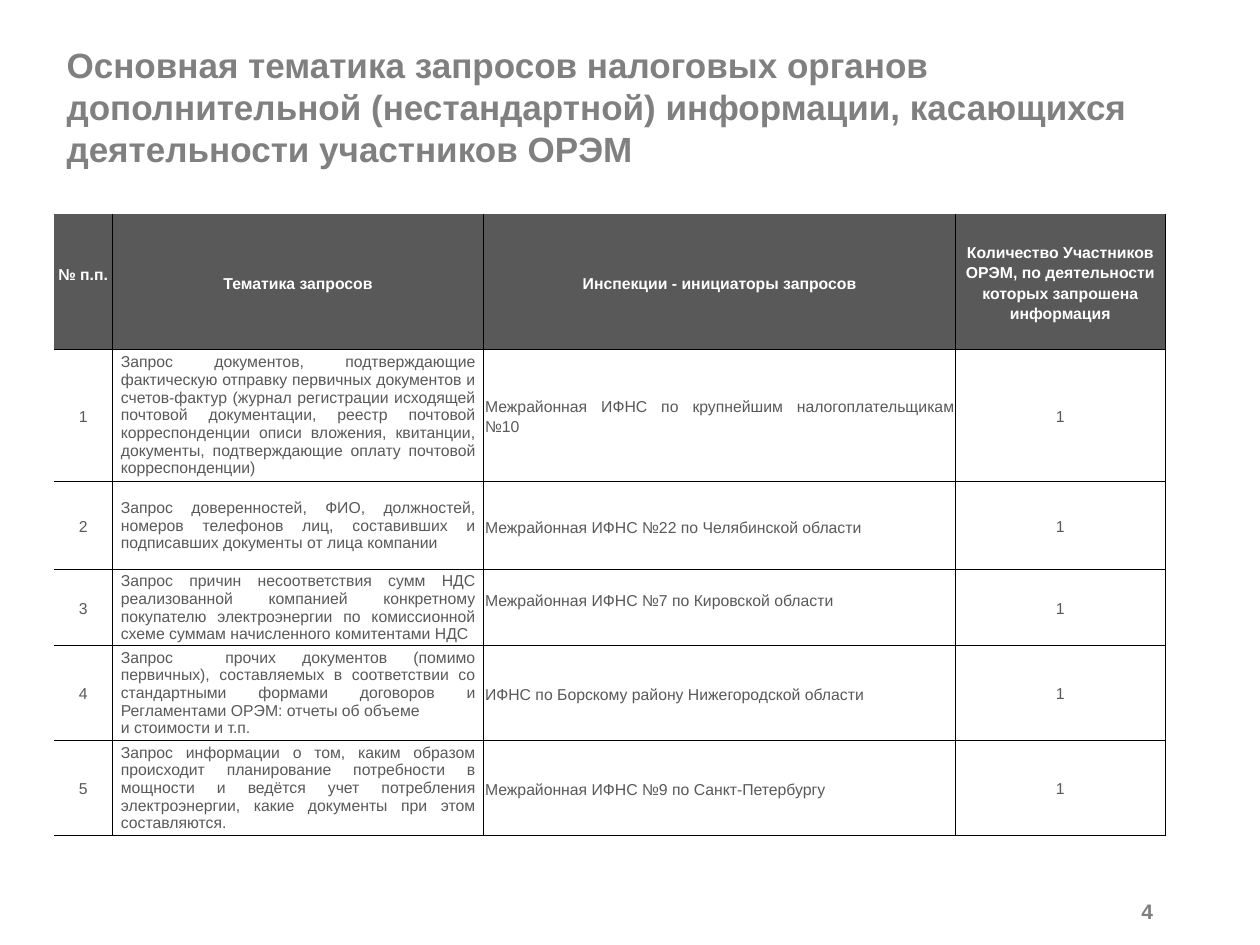
from lxml.etree import SubElement
from pptx import Presentation
from pptx.dml.color import RGBColor
from pptx.enum.text import MSO_ANCHOR, PP_ALIGN
from pptx.oxml.ns import qn
from pptx.util import Inches, Pt

# Content
TITLE = ("Основная тематика запросов налоговых органов дополнительной "
         "(нестандартной) информации, касающихся деятельности участников ОРЭМ")
PAGE = "4"
HEADERS = ["№ п.п.", "Тематика запросов", "Инспекции - инициаторы запросов",
           "Количество Участников ОРЭМ, по деятельности которых запрошена информация"]
REQUESTS = [  # topic, inspection, number of participants
    ("Запрос документов, подтверждающие фактическую отправку первичных документов "
     "и счетов-фактур (журнал регистрации исходящей почтовой документации, реестр "
     "почтовой корреспонденции описи вложения, квитанции, документы, подтверждающие "
     "оплату почтовой корреспонденции)",
     "Межрайонная ИФНС по крупнейшим налогоплательщикам №10", 1),
    ("Запрос доверенностей, ФИО, должностей, номеров телефонов лиц, составивших "
     "и подписавших документы от лица компании",
     "Межрайонная ИФНС №22 по Челябинской области", 1),
    ("Запрос причин несоответствия сумм НДС реализованной компанией конкретному "
     "покупателю электроэнергии по комиссионной схеме суммам начисленного "
     "комитентами НДС",
     "Межрайонная ИФНС №7 по Кировской области", 1),
    ("Запрос  прочих документов (помимо первичных), составляемых в соответствии со "
     "стандартными формами договоров и Регламентами ОРЭМ: отчеты об объеме\n"
     "и стоимости и т.п.",
     "ИФНС по Борскому району Нижегородской области", 1),
    ("Запрос информации о том, каким образом происходит планирование потребности "
     "в мощности и ведётся учет потребления электроэнергии, какие документы при "
     "этом составляются.",
     "Межрайонная ИФНС №9 по Санкт-Петербургу", 1),
]

# Layout and style
COLORS = {"title": "808080", "page": "7F7F7F", "dark": "595959",
          "white": "FFFFFF", "line": "000000"}
FONT = "Arial"
LEFT, WIDTH = 0.43, 8.82
COLS = [0.46, 2.95, 3.74, 1.67]
ROWS = [1.07, 0.98, 0.7, 0.56, 0.7, 0.7]
ALIGNS = [PP_ALIGN.CENTER, PP_ALIGN.JUSTIFY, PP_ALIGN.JUSTIFY, PP_ALIGN.CENTER]
RAISED = {(0, 0): 0.11, (3, 2): 0.14}  # bottom margins that lift the text


def rgb(name):
    return RGBColor.from_string(COLORS[name])


def style_text(tf, text, size, color, bold=False, align=PP_ALIGN.LEFT, spacing=None):
    tf.text = text
    for p in tf.paragraphs:
        p.alignment = align
        if spacing:
            p.line_spacing = spacing
        for r in p.runs:
            r.font.name, r.font.size, r.font.bold = FONT, Pt(size), bold
            r.font.color.rgb = rgb(color)


def add_text(s, text, left, top, width, height, *style, **options):
    tf = s.shapes.add_textbox(*map(Inches, (left, top, width, height))).text_frame
    tf.word_wrap = True
    tf.vertical_anchor = MSO_ANCHOR.MIDDLE
    style_text(tf, text, *style, **options)


def set_borders(cell, i, j):
    tcPr = cell._tc.get_or_add_tcPr()
    # The outer left and top edges stay open
    for side, shown in (("L", j > 0), ("R", True), ("T", i > 0), ("B", True)):
        ln = SubElement(tcPr, qn(f"a:ln{side}"), w=str(Pt(0.5)))
        if shown:
            fill = SubElement(ln, qn("a:solidFill"))
            SubElement(fill, qn("a:srgbClr"), val=COLORS["line"])
        else:
            SubElement(ln, qn("a:noFill"))


prs = Presentation()
prs.slide_width, prs.slide_height = Inches(10), Inches(7.5)
s = prs.slides.add_slide(prs.slide_layouts[6])

# Title and page number
add_text(s, TITLE, LEFT, 0.3, WIDTH, 1.09, 20, "title", bold=True)
add_text(s, PAGE, 8.15, 7.06, 1.1, 0.34, 12, "page", bold=True, align=PP_ALIGN.RIGHT)

# Table of requests
data = [HEADERS] + [[n, *row] for n, row in enumerate(REQUESTS, 1)]
table = s.shapes.add_table(len(ROWS), len(COLS), Inches(LEFT), Inches(1.7),
                           Inches(WIDTH), Inches(sum(ROWS))).table
table.first_row = table.horz_banding = False
for col, width in zip(table.columns, COLS):
    col.width = Inches(width)
for row, height in zip(table.rows, ROWS):
    row.height = Inches(height)

for i, values in enumerate(data):
    head = i == 0
    for j, value in enumerate(values):
        cell = table.cell(i, j)
        tight = head or j == 2
        cell.margin_left = cell.margin_right = Inches(0.01 if tight else 0.07)
        cell.margin_top = Inches(0.01 if tight else 0)
        cell.margin_bottom = Inches(RAISED.get((i, j), 0))
        cell.vertical_anchor = MSO_ANCHOR.MIDDLE
        single = (i, j) == (0, 0) or (j == 1 and not head)
        style_text(cell.text_frame, str(value), 9, "white" if head else "dark", head,
                   PP_ALIGN.CENTER if head else ALIGNS[j], None if single else 1.15)
        set_borders(cell, i, j)
        cell.fill.solid()
        cell.fill.fore_color.rgb = rgb("dark" if head else "white")

prs.save("out.pptx")
